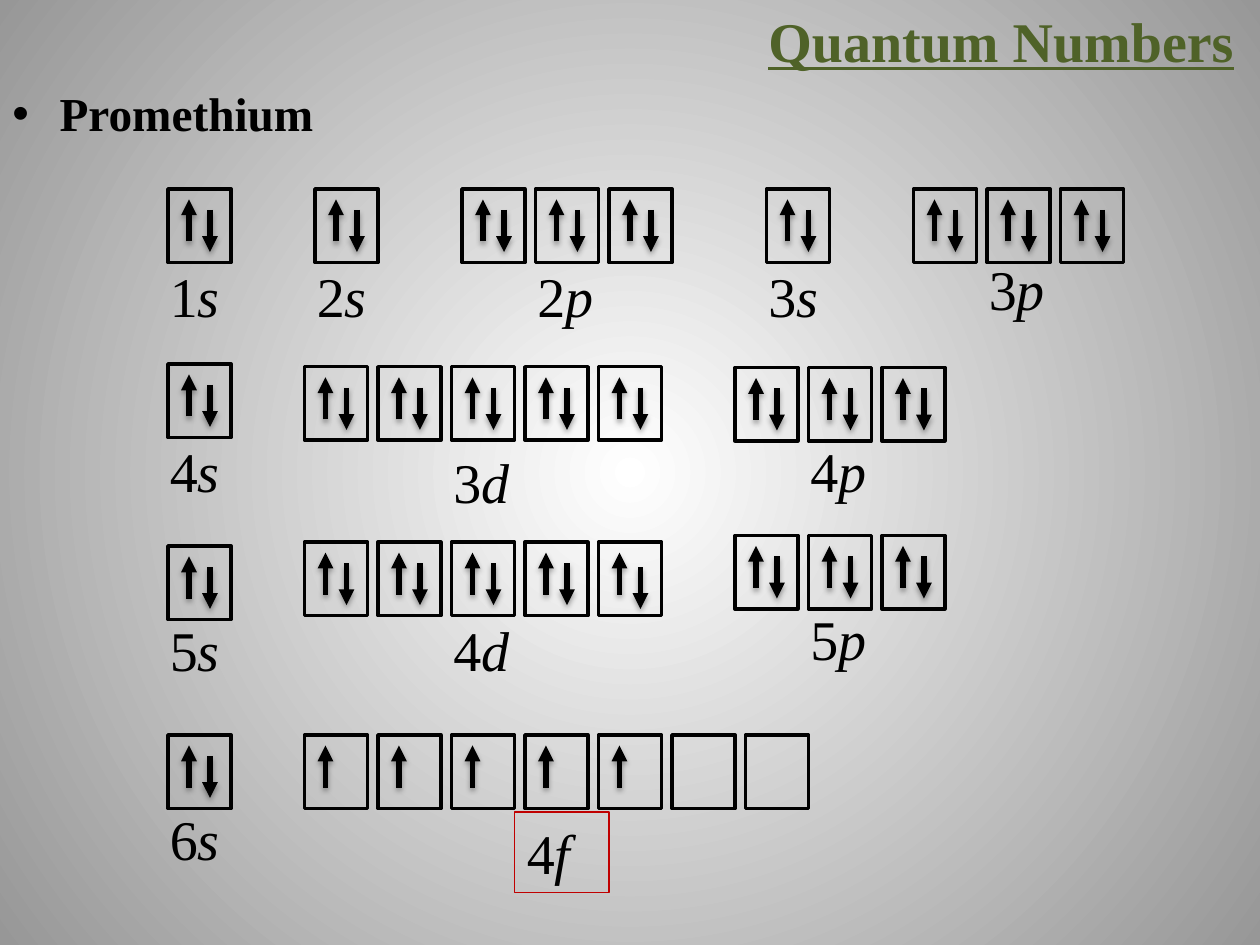
from dataclasses import dataclass

from pptx import Presentation
from pptx.dml.color import RGBColor
from pptx.enum.shapes import MSO_CONNECTOR, MSO_SHAPE
from pptx.enum.text import MSO_AUTO_SIZE
from pptx.oxml import parse_xml
from pptx.oxml.ns import nsdecls, qn
from pptx.util import Pt


@dataclass(frozen=True)
class Theme:
    font: str = "Times New Roman"
    ink: RGBColor = RGBColor(0x00, 0x00, 0x00)
    title: RGBColor = RGBColor(0x4F, 0x62, 0x28)
    accent: RGBColor = RGBColor(0xC0, 0x00, 0x00)
    center: RGBColor = RGBColor(0xFF, 0xFF, 0xFF)
    edge: RGBColor = RGBColor(0x97, 0x97, 0x97)
    large: int = 32
    body: int = 27


# Orbital geometry
BOX_W, BOX_H, PITCH = 36, 42, 42
LABEL_H = 46

# Label, left, top, boxes, electrons, label left, label top, label width
SUBSHELLS = [
    ("1s", 96, 108, 1, 2, 90, 146, 54),
    ("2s", 180, 108, 1, 2, 174, 146, 54),
    ("2p", 264, 108, 3, 6, 300, 146, 66),
    ("3s", 438, 108, 1, 2, 432, 146, 54),
    ("3p", 522, 108, 3, 6, 558, 142, 66),
    ("4s", 96, 208, 1, 2, 90, 246, 54),
    ("3d", 174, 209.6, 5, 10, 252, 252, 54),
    ("4p", 420, 210, 3, 6, 456, 246, 66),
    ("5s", 96, 312, 1, 2, 90, 348, 54),
    ("4d", 174, 309.8, 5, 9, 252, 348, 54),
    ("5p", 420, 306, 3, 6, 456, 342, 66),
    ("6s", 96, 420, 1, 2, 90, 456, 54),
    ("4f", 174, 420, 7, 5, 294, 464, 54),
]


class Deck:
    def __init__(self, theme):
        self.theme = theme
        self.prs = Presentation()
        self.prs.slide_width, self.prs.slide_height = Pt(720), Pt(540)
        self.s = self.prs.slides.add_slide(self.prs.slide_layouts[6])

    def background(self):
        fill = self.s.background.fill
        fill.gradient()
        for stop, color in zip(fill.gradient_stops, (self.theme.center, self.theme.edge)):
            stop.color.rgb = color
        grad = next(self.s.element.iter(qn("a:gradFill")))
        grad.replace(grad.find(qn("a:lin")), parse_xml(
            f'<a:path {nsdecls("a")} path="circle">'
            '<a:fillToRect l="50000" t="50000" r="50000" b="50000"/></a:path>'))

    def text(self, x, y, w, h, runs, size, color, bold=None, underline=None):
        """Add a text box from (text, italic) runs."""
        sp = self.s.shapes.add_textbox(Pt(x), Pt(y), Pt(w), Pt(h))
        tf = sp.text_frame
        tf.word_wrap = True
        tf.auto_size = MSO_AUTO_SIZE.SHAPE_TO_FIT_TEXT
        p = tf.paragraphs[0]
        for text, italic in runs:
            r = p.add_run()
            r.text = text
            f = r.font
            f.name, f.size, f.color.rgb = self.theme.font, Pt(size), color
            f.bold, f.underline, f.italic = bold, underline, italic
        return sp

    def bullet(self, x, y, w, h, text):
        sp = self.text(x, y, w, h, [(text, None)], self.theme.body, self.theme.ink, bold=True)
        p = sp.text_frame.paragraphs[0]
        p.line_spacing = 0.9
        p.space_before = p.space_after = Pt(5.4)
        pPr = p._p.get_or_add_pPr()
        pPr.set("marL", str(Pt(27)))
        pPr.set("indent", str(-Pt(27)))
        pPr.append(parse_xml(f'<a:buFont {nsdecls("a")} typeface="Arial"/>'))
        pPr.append(parse_xml(f'<a:buChar {nsdecls("a")} char="•"/>'))

    def box(self, x, y):
        sp = self.s.shapes.add_shape(MSO_SHAPE.RECTANGLE, Pt(x), Pt(y), Pt(BOX_W), Pt(BOX_H))
        sp.shadow.inherit = False
        sp.fill.background()
        sp.line.color.rgb = self.theme.ink
        sp.line.width = Pt(2)

    def arrow(self, x, y1, y2):
        cx = self.s.shapes.add_connector(MSO_CONNECTOR.STRAIGHT, Pt(x), Pt(y1), Pt(x), Pt(y2))
        cx.line.color.rgb = self.theme.ink
        cx.line.width = Pt(3)
        cx.line._get_or_add_ln().append(
            parse_xml(f'<a:tailEnd {nsdecls("a")} type="triangle"/>'))
        cx._element.spPr.append(parse_xml(
            f'<a:effectLst {nsdecls("a")}><a:outerShdw blurRad="{Pt(3.1)}" dist="{Pt(1.8)}" '
            'dir="5400000" rotWithShape="0"><a:srgbClr val="000000"><a:alpha val="35000"/>'
            '</a:srgbClr></a:outerShdw></a:effectLst>'))

    def spin_up(self, x, y):
        self.arrow(x + 12, y + 30, y + 6)

    def spin_down(self, x, y):
        self.arrow(x + 24, y + 12, y + 36)

    def subshell(self, label, x, y, boxes, electrons, label_x, label_y, label_w):
        """Draw the boxes, filling one electron each before pairing."""
        for i in range(boxes):
            left = x + i * PITCH
            self.box(left, y)
            if i < electrons:
                self.spin_up(left, y)
            if i + boxes < electrons:
                self.spin_down(left, y)
        return self.text(label_x, label_y, label_w, LABEL_H,
                         [(label[0], None), (label[1], True)],
                         self.theme.large, self.theme.ink)


def main():
    theme = Theme()
    deck = Deck(theme)
    deck.background()

    # Headings
    deck.bullet(0, 48, 210, 37, "Promethium")
    deck.text(432, 0, 288, LABEL_H, [("Quantum Numbers", None)],
              theme.large, theme.title, bold=True, underline=True)

    # Orbital diagram
    labels = {row[0]: deck.subshell(*row) for row in SUBSHELLS}

    # Last 4d electron sits slightly lower than the others
    deck.spin_down(174 + 4 * PITCH, 312)

    # Outline the subshell being filled
    outline = labels["4f"].line
    outline.color.rgb = theme.accent
    outline.width = Pt(0.75)

    deck.prs.save("out.pptx")


if __name__ == "__main__":
    main()
